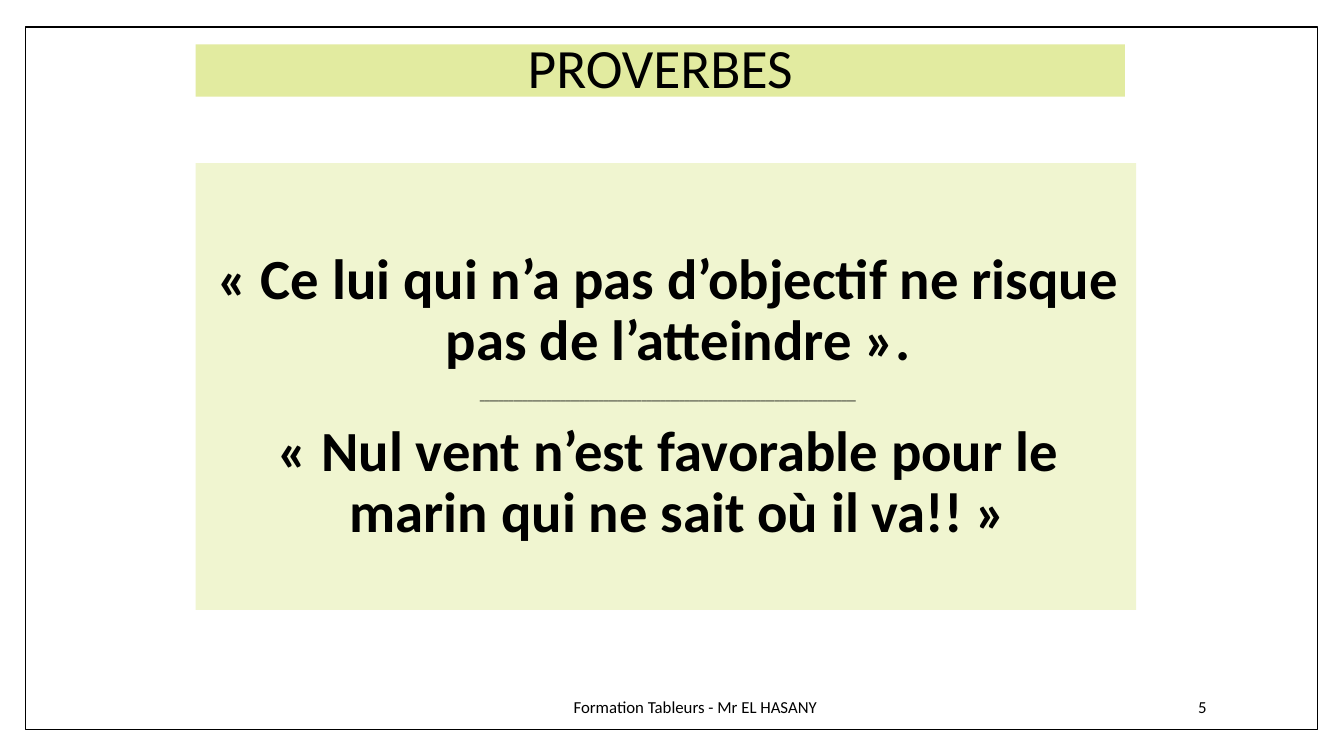
from lxml import etree
from pptx import Presentation
from pptx.dml.color import RGBColor
from pptx.enum import shapes, text
from pptx.oxml.ns import qn
from pptx.util import Pt

# Content
TITLE = "PROVERBES"
PROVERBS = [  # text, size
    ("« Ce lui qui n’a pas d’objectif ne risque pas de l’atteindre ».", 40.5),
    ("_" * 79, 6.8),
    ("« Nul vent n’est favorable pour le marin qui ne sait où il va!! »", 40.5),
]
FOOTERS = [  # text, box, alignment
    ("Formation Tableurs - Mr EL HASANY", (311, 490.3, 371.5, 28.8), text.PP_ALIGN.CENTER),
    ("5", (734.4, 490.3, 134.6, 28.8), text.PP_ALIGN.RIGHT),
]
FRAME_BOX = (18, 19.4, 923, 501.8)
TITLE_BOX = (139.7, 31.7, 663.8, 37.4)
BODY_BOX = (139.7, 116.6, 671.8, 319)

FONT = "Calibri"
BLACK = RGBColor(0x00, 0x00, 0x00)
WHITE = RGBColor(0xFF, 0xFF, 0xFF)
LIME = RGBColor(0xE2, 0xEB, 0xA0)
PALE_LIME = RGBColor(0xF0, 0xF5, 0xD0)


def place(sp, box):
    sp.left, sp.top, sp.width, sp.height = (Pt(v) for v in box)


def fill(sp, color):
    sp.fill.solid()
    sp.fill.fore_color.rgb = color


def style(p, size, align, bold=False):
    p.alignment = align
    for r in p.runs:
        r.font.name, r.font.size, r.font.bold = FONT, Pt(size), bold
        r.font.color.rgb = BLACK


def setup(tf, anchor):
    tf.word_wrap = True
    tf.auto_size = text.MSO_AUTO_SIZE.NONE
    tf.vertical_anchor = anchor


prs = Presentation()
prs.slide_width, prs.slide_height = Pt(960), Pt(540)
s = prs.slides.add_slide(prs.slide_layouts[1])
title, body = s.shapes.title, s.placeholders[1]

# Page frame, behind everything else
frame = s.shapes.add_shape(shapes.MSO_SHAPE.RECTANGLE, *(Pt(v) for v in FRAME_BOX))
frame.shadow.inherit = False
fill(frame, WHITE)
frame.line.color.rgb = BLACK
frame.line.width = Pt(1)
title._element.addprevious(frame._element)

# Title band
place(title, TITLE_BOX)
fill(title, LIME)
title.text_frame.text = TITLE
setup(title.text_frame, text.MSO_ANCHOR.MIDDLE)
p = title.text_frame.paragraphs[0]
p.line_spacing = 0.9
style(p, 39.6, text.PP_ALIGN.CENTER)

# Proverbs panel
place(body, BODY_BOX)
fill(body, PALE_LIME)
tf = body.text_frame
setup(tf, text.MSO_ANCHOR.TOP)
tf.margin_top = Pt(62.4)
for i, (line, size) in enumerate(PROVERBS):
    p = tf.add_paragraph() if i else tf.paragraphs[0]
    p.text = line
    p.line_spacing = 0.9
    p.space_before = Pt(14 if i else 0)
    style(p, size, text.PP_ALIGN.CENTER, bold=True)
    pPr = p._p.get_or_add_pPr()
    pPr.set("marL", str(Pt(18)))
    pPr.set("indent", str(Pt(-14.4)))
    etree.SubElement(pPr, qn("a:buNone"))

# Footer and page number
for line, box, align in FOOTERS:
    sp = s.shapes.add_textbox(*(Pt(v) for v in box))
    sp.text_frame.text = line
    setup(sp.text_frame, text.MSO_ANCHOR.MIDDLE)
    style(sp.text_frame.paragraphs[0], 12, align)

prs.save("out.pptx")
